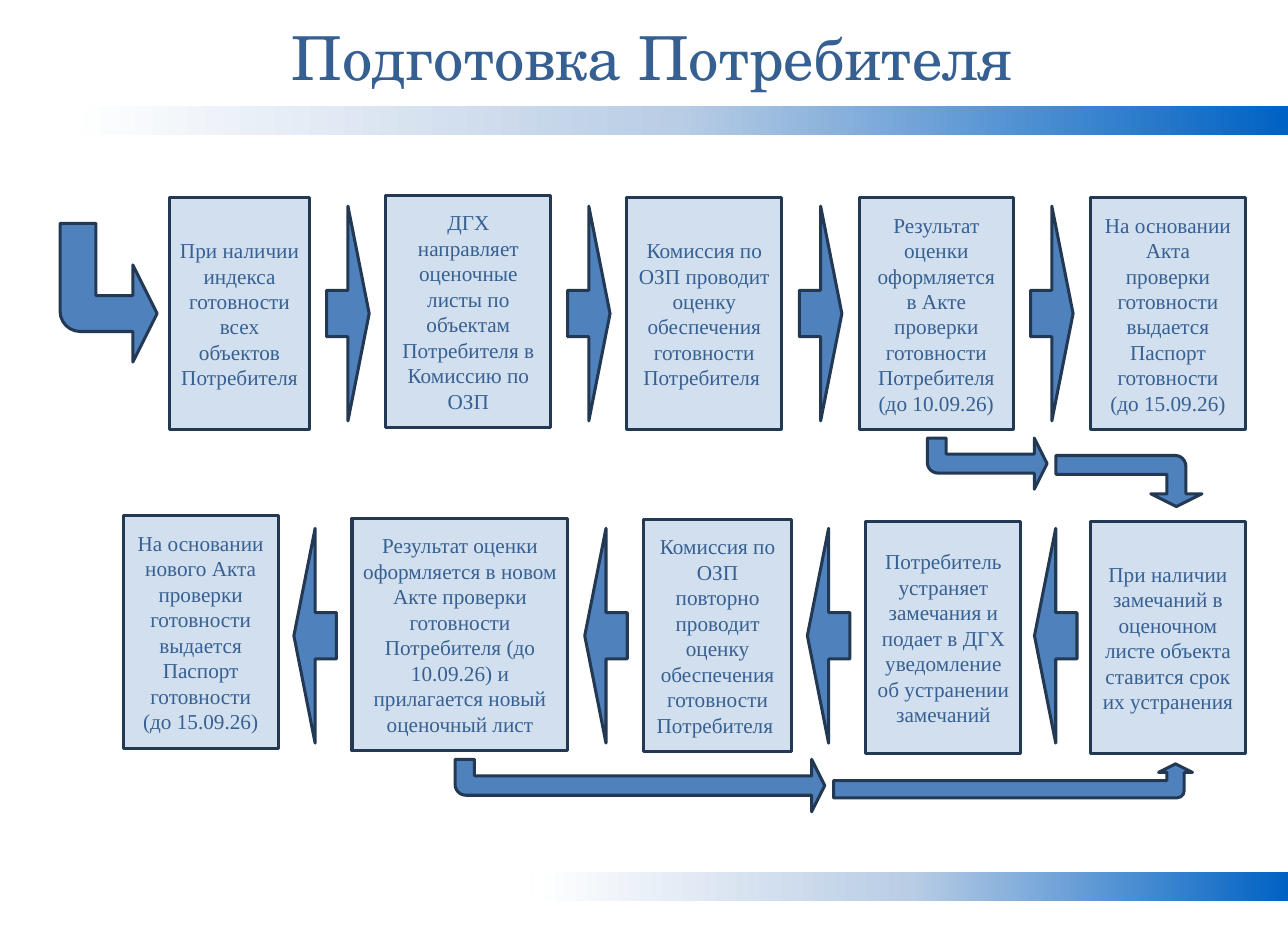
"""Build the consumer readiness flow slide."""
from copy import deepcopy
from dataclasses import dataclass

from pptx import Presentation
from pptx import util as u
from pptx.dml.color import RGBColor
from pptx.enum import shapes, text
from pptx.oxml.ns import qn
from pptx.shapes.autoshape import Shape
from pptx.slide import Slide


@dataclass(frozen=True)
class Theme:
    """Colours, fonts and sizes of the slide."""
    ink: str = "366092"
    box: str = "D2DFEE"
    arrow: str = "4F81BD"
    line: str = "233953"
    bar: tuple[str, ...] = ("0062C4", "B9CDE5", "FFFFFF")
    title_font: str = "TeX Gyre Schola"
    body_font: str = "Times New Roman"
    title_size: int = 40
    body_size: int = 14
    line_width: int = 2


@dataclass(frozen=True)
class Step:
    """A text box of the flow, in centimetres."""
    left: float
    top: float
    width: float
    label: str


@dataclass(frozen=True)
class Row:
    """A run of steps read left to right, with arrows in the gaps."""
    steps: tuple[Step, ...]
    arrow_top: float
    rotation: int


@dataclass(frozen=True)
class Bend:
    """A bent arrow, in centimetres."""
    left: float
    top: float
    width: float
    height: float
    rotation: int = 0
    flipped: bool = True
    thickness: float = 0.37


THEME = Theme()
STEP_HEIGHT = 5.41
ARROW_WIDTH, ARROW_HEIGHT = 0.99, 5.0
SLIDE_WIDTH, SLIDE_HEIGHT = 30, 22
BAR_HEIGHT = 0.69
BARS = ((1.52, 2.46), (12.4, 20.29))

ROWS = (
    Row((
        Step(3.94, 4.6, 3.28, "При наличии индекса готовности всех объектов Потребителя "),
        Step(8.99, 4.55, 3.84, "ДГХ направляет оценочные листы по объектам Потребителя в Комиссию по ОЗП"),
        Step(14.6, 4.6, 3.61, "Комиссия по ОЗП проводит оценку обеспечения готовности Потребителя "),
        Step(20.02, 4.6, 3.58, "Результат оценки оформляется в Акте проверки готовности Потребителя (до 10.09.26)"),
        Step(25.4, 4.6, 3.61, "На основании Акта проверки готовности выдается Паспорт готовности (до 15.09.26)"),
    ), 4.8, 0),
    Row((
        Step(2.87, 12.01, 3.61, "На основании нового Акта проверки готовности выдается Паспорт готовности (до 15.09.26)"),
        Step(8.2, 12.07, 5.03, "Результат оценки оформляется в новом Акте проверки готовности Потребителя "
             "(до 10.09.26) и прилагается новый оценочный лист"),
        Step(15.0, 12.09, 3.43, "Комиссия по ОЗП повторно проводит оценку обеспечения готовности Потребителя "),
        Step(20.17, 12.14, 3.61, "Потребитель устраняет замечания и подает в ДГХ уведомление об устранении замечаний"),
        Step(25.4, 12.14, 3.61, "При наличии замечаний в оценочном листе объекта ставится срок их устранения"),
    ), 12.3, 180),
)

BENDS = (
    Bend(1.4, 5.2, 2.26, 3.23),
    Bend(25.7, 9.5, 1.19, 3.4, rotation=90, flipped=False),
    Bend(21.6, 10.2, 2.79, 1.19),
    Bend(23.2, 14.0, 0.79, 8.36, rotation=270, thickness=0.51),
    Bend(10.6, 17.68, 8.61, 1.22),
)


def write(sp: Shape, words: str, *, font: str, size: int, color: str) -> None:
    """Put centred text into a shape."""
    tf = sp.text_frame
    tf.word_wrap = True
    tf.vertical_anchor = text.MSO_ANCHOR.MIDDLE
    p = tf.paragraphs[0]
    p.alignment = text.PP_ALIGN.CENTER
    r = p.add_run()
    r.text = words
    r.font.name = font
    r.font.size = u.Pt(size)
    r.font.color.rgb = RGBColor.from_string(color)


def add_shape(slide: Slide, kind: shapes.MSO_SHAPE, left: float, top: float,
              width: float, height: float, fill: str) -> Shape:
    """Add an outlined preset shape without shadow."""
    sp = slide.shapes.add_shape(kind, u.Cm(left), u.Cm(top), u.Cm(width), u.Cm(height))
    sp.shadow.inherit = False
    sp.fill.solid()
    sp.fill.fore_color.rgb = RGBColor.from_string(fill)
    sp.line.color.rgb = RGBColor.from_string(THEME.line)
    sp.line.width = u.Pt(THEME.line_width)
    return sp


def add_bar(slide: Slide, left: float, top: float) -> None:
    """Add a gradient bar that runs to the right edge."""
    sp = add_shape(slide, shapes.MSO_SHAPE.RECTANGLE, left, top,
                   SLIDE_WIDTH - left, BAR_HEIGHT, THEME.bar[0])
    sp.line.fill.background()
    sp.fill.gradient()
    sp.fill.gradient_angle = 180
    stops = sp._element.spPr.find(qn("a:gradFill")).find(qn("a:gsLst"))
    stops.insert(1, deepcopy(stops[0]))
    for i, (stop, color) in enumerate(zip(sp.fill.gradient_stops, THEME.bar)):
        stop.position = i / 2
        stop.color.rgb = RGBColor.from_string(color)


def add_title(slide: Slide, words: str) -> None:
    """Add the slide heading."""
    sp = slide.shapes.add_textbox(u.Cm(0.97), u.Cm(0.6), u.Cm(28.47), u.Cm(1.4))
    tf = sp.text_frame
    tf.margin_left = tf.margin_right = u.Cm(0.3)
    tf.margin_top = tf.margin_bottom = u.Cm(0.15)
    write(sp, words, font=THEME.title_font, size=THEME.title_size, color=THEME.ink)


def add_row(slide: Slide, row: Row) -> None:
    """Add the steps of a row and an arrow in the middle of each gap."""
    for step in row.steps:
        sp = add_shape(slide, shapes.MSO_SHAPE.RECTANGLE, step.left, step.top,
                       step.width, STEP_HEIGHT, THEME.box)
        write(sp, step.label, font=THEME.body_font, size=THEME.body_size, color=THEME.ink)
    for before, after in zip(row.steps, row.steps[1:]):
        middle = (before.left + before.width + after.left) / 2
        sp = add_shape(slide, shapes.MSO_SHAPE.RIGHT_ARROW, middle - ARROW_WIDTH / 2,
                       row.arrow_top, ARROW_WIDTH, ARROW_HEIGHT, THEME.arrow)
        sp.adjustments[0] = 0.216
        sp.rotation = row.rotation


def add_bend(slide: Slide, bend: Bend) -> None:
    """Add a bent arrow."""
    sp = add_shape(slide, shapes.MSO_SHAPE.BENT_ARROW, bend.left, bend.top,
                   bend.width, bend.height, THEME.arrow)
    for i, value in enumerate((bend.thickness, 0.5, 0.25, 0.208)):
        sp.adjustments[i] = value
    sp.rotation = bend.rotation
    if bend.flipped:
        sp._element.spPr.find(qn("a:xfrm")).set("flipV", "1")


def main() -> None:
    """Build and save the presentation."""
    prs = Presentation()
    prs.slide_width, prs.slide_height = u.Cm(SLIDE_WIDTH), u.Cm(SLIDE_HEIGHT)
    slide = prs.slides.add_slide(prs.slide_layouts[6])
    for left, top in BARS:
        add_bar(slide, left, top)
    add_title(slide, "Подготовка Потребителя")
    for row in ROWS:
        add_row(slide, row)
    for bend in BENDS:
        add_bend(slide, bend)
    prs.save("out.pptx")


if __name__ == "__main__":
    main()
